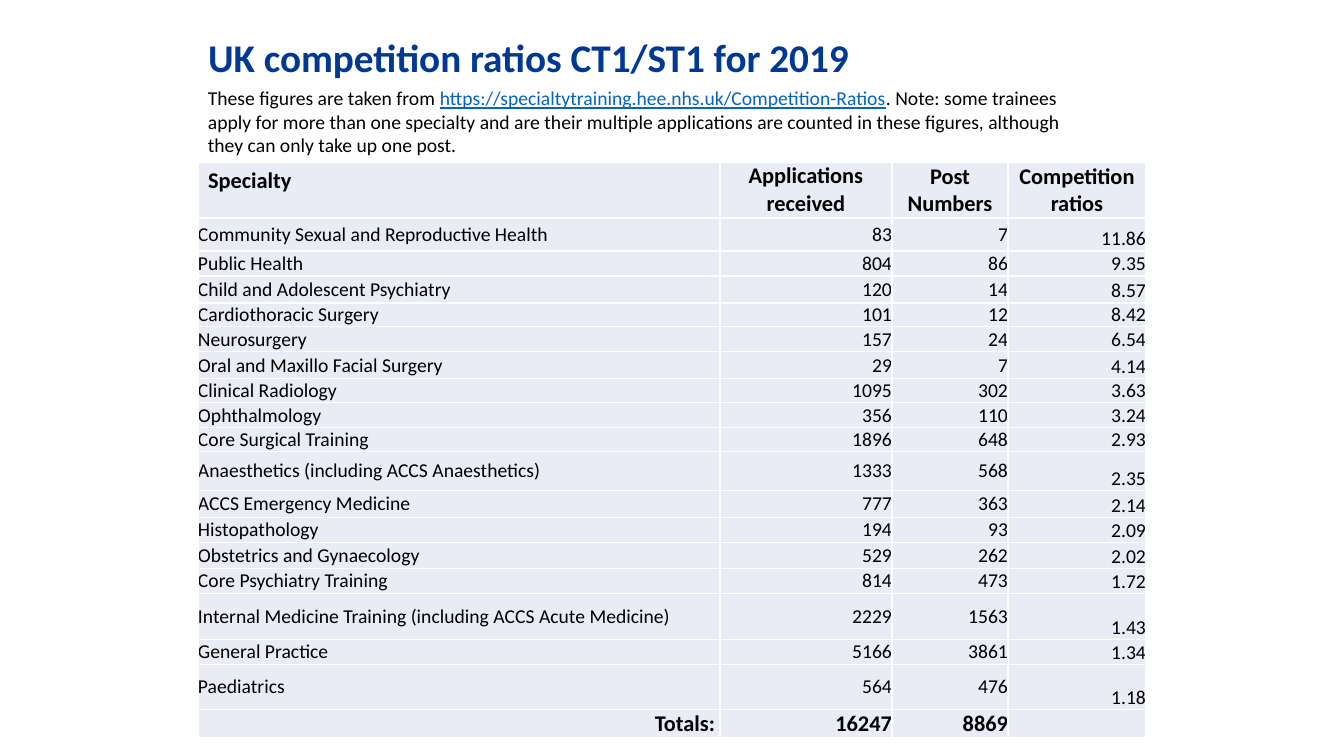
from lxml import etree
from pptx import Presentation
from pptx import util as u
from pptx.dml.color import RGBColor
from pptx.enum import text
from pptx.oxml import ns

PX = 914400 / 100.8
NAVY = RGBColor(0x00, 0x38, 0x93)
BLACK = RGBColor(0x00, 0x00, 0x00)
LINK_BLUE = RGBColor(0x05, 0x63, 0xC1)
WHITE = RGBColor(0xFF, 0xFF, 0xFF)
PALE_BLUE = RGBColor(0xE9, 0xEB, 0xF5)
LEFT, CENTER, RIGHT = text.PP_ALIGN.LEFT, text.PP_ALIGN.CENTER, text.PP_ALIGN.RIGHT
TOP, MIDDLE, BOTTOM = text.MSO_ANCHOR.TOP, text.MSO_ANCHOR.MIDDLE, text.MSO_ANCHOR.BOTTOM


def px(length):
    return u.Emu(round(length * PX))


def write(paragraph, words, size=14, color=BLACK, bold=False, underline=False, align=LEFT):
    paragraph.alignment = align
    run = paragraph.add_run()
    run.text = words
    run.font.name = "Calibri"
    run.font.size = u.Pt(size)
    run.font.bold = bold
    run.font.underline = underline
    run.font.color.rgb = color


presentation = Presentation()
presentation.slide_width = px(1344)
presentation.slide_height = px(756)
slide = presentation.slides.add_slide(presentation.slide_layouts[5])
slide.background.fill.solid()
slide.background.fill.fore_color.rgb = WHITE

# Title
title = slide.shapes.title
title.left, title.top, title.width, title.height = px(198), px(18), px(857), px(126)
title_frame = title.text_frame
title_frame.auto_size = text.MSO_AUTO_SIZE.NONE
title_frame.word_wrap = True
title_frame.vertical_anchor = MIDDLE
title_frame.margin_bottom = px(48)
title_frame.paragraphs[0].line_spacing = 0.9
write(title_frame.paragraphs[0], "UK competition ratios CT1/ST1 for 2019", size=28, color=NAVY, bold=True)

# Competition table
rows = [
    ("Specialty", "Applications received", "Post Numbers", "Competition ratios"),
    ("Community Sexual and Reproductive Health", "83", "7", "11.86"),
    ("Public Health", "804", "86", "9.35"),
    ("Child and Adolescent Psychiatry", "120", "14", "8.57"),
    ("Cardiothoracic Surgery", "101", "12", "8.42"),
    ("Neurosurgery", "157", "24", "6.54"),
    ("Oral and Maxillo Facial Surgery", "29", "7", "4.14"),
    ("Clinical Radiology", "1095", "302", "3.63"),
    ("Ophthalmology", "356", "110", "3.24"),
    ("Core Surgical Training", "1896", "648", "2.93"),
    ("Anaesthetics (including ACCS Anaesthetics)", "1333", "568", "2.35"),
    ("ACCS Emergency Medicine", "777", "363", "2.14"),
    ("Histopathology", "194", "93", "2.09"),
    ("Obstetrics and Gynaecology", "529", "262", "2.02"),
    ("Core Psychiatry Training", "814", "473", "1.72"),
    ("Internal Medicine Training (including ACCS Acute Medicine)", "2229", "1563", "1.43"),
    ("General Practice", "5166", "3861", "1.34"),
    ("Paediatrics", "564", "476", "1.18"),
    ("Totals:", "16247", "8869", ""),
]
row_heights = [56, 33, 25, 27, 24, 25, 27, 24, 25, 24, 39, 27, 25, 26, 25, 46, 25, 45, 28]
column_widths = [522, 172, 116, 138]
header_anchors = [TOP, MIDDLE, BOTTOM, BOTTOM]
totals_anchors = [MIDDLE, MIDDLE, BOTTOM, BOTTOM]
body_anchors = [MIDDLE, MIDDLE, MIDDLE, BOTTOM]
last_row = len(rows) - 1

table = slide.shapes.add_table(
    len(rows), len(column_widths), px(198), px(162), px(sum(column_widths)), px(sum(row_heights))
).table
table.first_row = False
table.horz_banding = False
for column, width in zip(table.columns, column_widths):
    column.width = px(width)

for r, (values, height) in enumerate(zip(rows, row_heights)):
    table.rows[r].height = px(height)
    anchors = {0: header_anchors, last_row: totals_anchors}.get(r, body_anchors)
    emphasis = r in (0, last_row)
    for c, value in enumerate(values):
        cell = table.cell(r, c)
        properties = cell._tc.get_or_add_tcPr()
        for side in ("a:lnL", "a:lnR", "a:lnT", "a:lnB"):
            border = etree.SubElement(properties, ns.qn(side), w=str(u.Pt(1)))
            border_fill = etree.SubElement(border, ns.qn("a:solidFill"))
            etree.SubElement(border_fill, ns.qn("a:srgbClr"), val=str(WHITE))
        cell.fill.solid()
        cell.fill.fore_color.rgb = PALE_BLUE
        cell.vertical_anchor = anchors[c]
        if (r, c) != (0, 0):
            cell.margin_left = cell.margin_right = cell.margin_top = cell.margin_bottom = 0
        if r == 0:
            align = CENTER if c else LEFT
        else:
            align = RIGHT if c or r == last_row else LEFT
        paragraph = cell.text_frame.paragraphs[0]
        if value:
            write(paragraph, value, size=16 if emphasis else 14, bold=emphasis, align=align)
        else:
            paragraph._p.get_or_add_endParaRPr().set("sz", "1400")
table.cell(last_row, 0).margin_right = px(5)

# Note on the figures
note = slide.shapes.add_textbox(px(198), px(81), px(878), px(81))
note.text_frame.word_wrap = True
note.text_frame.auto_size = text.MSO_AUTO_SIZE.SHAPE_TO_FIT_TEXT
note_paragraph = note.text_frame.paragraphs[0]
write(note_paragraph, "These figures are taken from ")
write(note_paragraph, "https://specialtytraining.hee.nhs.uk/Competition-Ratios", color=LINK_BLUE, underline=True)
write(
    note_paragraph,
    ". Note: some trainees apply for more than one specialty and are their multiple applications "
    "are counted in these figures, although they can only take up one post.",
)

presentation.save("out.pptx")
